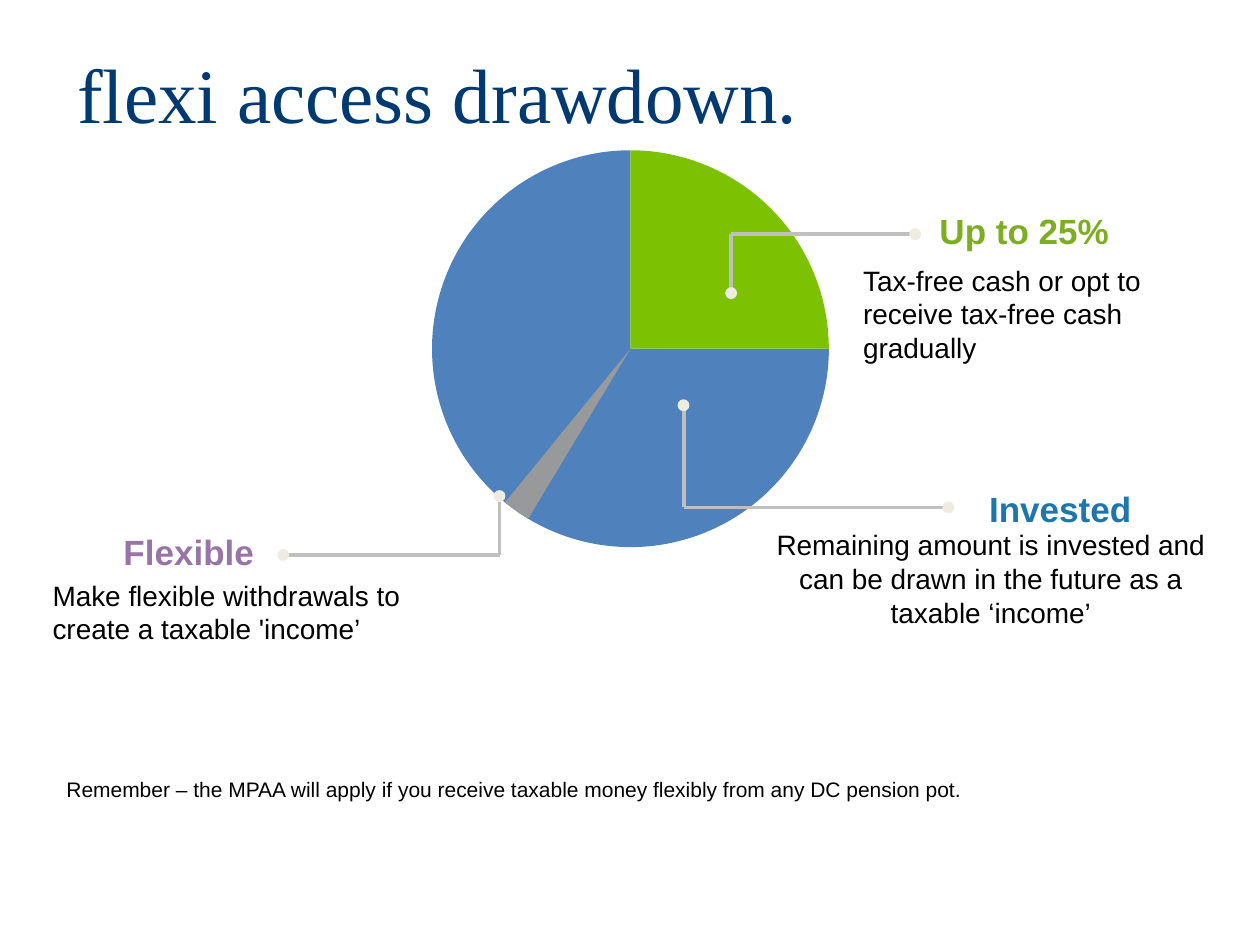
from lxml import etree
from pptx import Presentation
from pptx import util as u
from pptx.dml import color
from pptx.enum import shapes, text
from pptx.oxml import ns

COLORS = {
    "title": "003A70",
    "body": "000000",
    "blue": "4F81BD",
    "grey": "97999B",
    "green": "7DC202",
    "line": "BFBFBF",
    "dot": "EEECE1",
    "tax_free": "7DAE22",
    "flexible": "9875A7",
    "invested": "1D77AC",
}


def add_filled(preset, left, top, size, name):
    shape = slide.shapes.add_shape(preset, u.Cm(left), u.Cm(top), u.Cm(size), u.Cm(size))
    shape.shadow.inherit = False
    shape.fill.solid()
    shape.fill.fore_color.rgb = color.RGBColor.from_string(COLORS[name])
    shape.line.fill.background()
    return shape


def add_text(content, box, size, name="body", bold=False, wrap=True, align=text.PP_ALIGN.LEFT):
    frame = slide.shapes.add_textbox(*[u.Cm(value) for value in box]).text_frame
    frame.word_wrap = wrap
    frame.auto_size = text.MSO_AUTO_SIZE.SHAPE_TO_FIT_TEXT
    paragraph = frame.paragraphs[0]
    paragraph.text = content
    paragraph.alignment = align
    paragraph.font.name = "Arial"
    paragraph.font.size = u.Pt(size)
    paragraph.font.bold = bold
    paragraph.font.color.rgb = color.RGBColor.from_string(COLORS[name])


presentation = Presentation()
presentation.slide_width = u.Cm(25.4)
presentation.slide_height = u.Cm(19.05)
slide = presentation.slides.add_slide(presentation.slide_layouts[5])

title = slide.shapes.title
title.left, title.top = u.Cm(1.3), u.Cm(0.81)
title.width, title.height = u.Cm(23.65), u.Cm(2.11)
title.text_frame.text = "flexi access drawdown."
title.text_frame.vertical_anchor = text.MSO_ANCHOR.MIDDLE
paragraph = title.text_frame.paragraphs[0]
paragraph.alignment = text.PP_ALIGN.LEFT
paragraph.font.name = "Times New Roman"
paragraph.font.size = u.Pt(44)
paragraph.font.color.rgb = color.RGBColor.from_string(COLORS["title"])

for name, start, end in [("blue", 0, 270), ("grey", 121, 129.2), ("green", 270, 0)]:
    slice_shape = add_filled(shapes.MSO_SHAPE.PIE, 8.71, 3.03, 8, name)
    slice_shape.adjustments[0] = start * 0.6
    slice_shape.adjustments[1] = end * 0.6

DOT = 0.24
callouts = [
    ((14.74, 5.91), (18.45, 4.72)),
    ((10.07, 10), (5.71, 11.19)),
    ((13.78, 8.17), (19.12, 10.23)),
]
for start, end in callouts:
    corner = (start[0], end[1])
    for first, last in [(start, corner), (corner, end)]:
        connector = slide.shapes.add_connector(
            shapes.MSO_CONNECTOR.STRAIGHT, *[u.Cm(value) for value in first + last])
        connector.line.width = u.Pt(2.25)
        connector.line.color.rgb = color.RGBColor.from_string(COLORS["line"])
        etree.SubElement(connector._element.spPr, ns.qn("a:effectLst"))
    for x, y in [start, end]:
        add_filled(shapes.MSO_SHAPE.OVAL, x - DOT / 2, y - DOT / 2, DOT, "dot")

labels = [
    ("Up to 25%", (18.69, 4.09, 3.96, 1.12), "tax_free"),
    ("Flexible", (2.24, 10.57, 3.18, 1.12), "flexible"),
    ("Invested", (19.69, 9.7, 3.4, 1.12), "invested"),
]
for content, box, name in labels:
    add_text(content, box, 20, name, bold=True, wrap=False)

add_text("Tax-free cash or opt to receive tax-free cash gradually", (17.15, 5.18, 7.59, 2.31), 16)
add_text("Make flexible withdrawals to create a taxable 'income’", (0.81, 11.53, 9.14, 1.63), 16)
add_text("Remaining amount is invested and can be drawn in the future as a taxable ‘income’",
         (15.24, 10.52, 9.47, 2.31), 16, align=text.PP_ALIGN.CENTER)
add_text("Remember – the MPAA will apply if you receive taxable money flexibly from any DC pension pot.",
         (1.09, 15.52, 22.5, 0.76), 12)

presentation.save("out.pptx")
